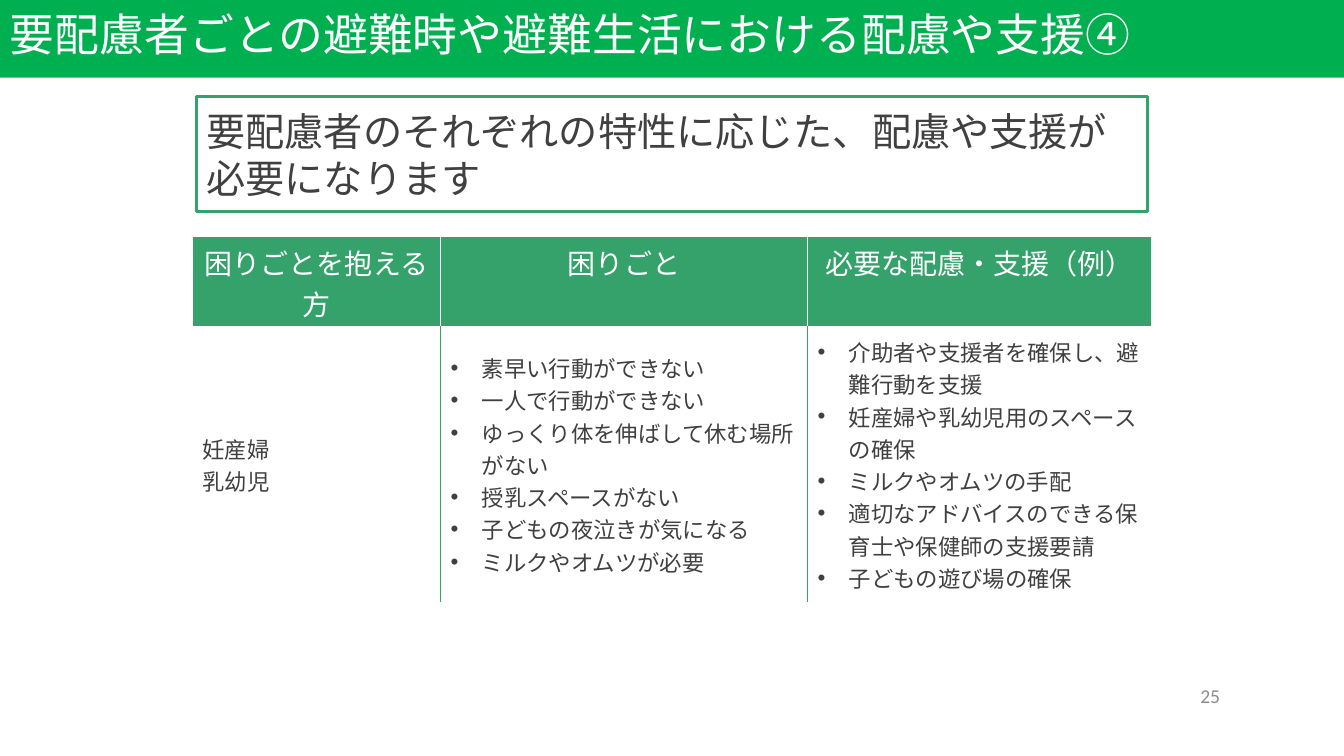
from dataclasses import dataclass

from lxml import etree
from pptx import Presentation
from pptx import util as u
from pptx.dml.color import RGBColor
from pptx.enum import shapes, text
from pptx.oxml.ns import qn


@dataclass(frozen=True)
class Theme:
    """Colours, fonts and type sizes of the slide."""
    bar: str = "00B050"
    green: str = "35A16B"
    white: str = "FFFFFF"
    ink: str = "404040"
    grey: str = "8C8C8C"
    sans: str = "Noto Sans CJK JP"
    latin: str = "Calibri"
    title: int = 32
    lead: int = 28
    head: int = 20
    body: int = 16
    page: int = 14


THEME = Theme()
LEFT, MID, RIGHT = text.PP_ALIGN.LEFT, text.PP_ALIGN.CENTER, text.PP_ALIGN.RIGHT
HEADS = ["困りごとを抱える方", "困りごと", "必要な配慮・支援（例）"]
PEOPLE = ["妊産婦", "乳幼児"]
NEEDS = [
    "素早い行動ができない",
    "一人で行動ができない",
    "ゆっくり体を伸ばして休む場所がない",
    "授乳スペースがない",
    "子どもの夜泣きが気になる",
    "ミルクやオムツが必要",
]
HELP = [
    "介助者や支援者を確保し、避難行動を支援",
    "妊産婦や乳幼児用のスペースの確保",
    "ミルクやオムツの手配",
    "適切なアドバイスのできる保育士や保健師の支援要請",
    "子どもの遊び場の確保",
]


def paint(fill, color):
    """Give a fill one solid colour."""
    fill.solid()
    fill.fore_color.rgb = RGBColor.from_string(color)


def add_bullet(para):
    """Give a paragraph a hanging round bullet."""
    props = para._p.get_or_add_pPr()
    indent = u.Inches(0.31)
    props.set("marL", str(indent))
    props.set("indent", str(-indent))
    etree.SubElement(props, qn("a:buFont"), typeface="Arial")
    etree.SubElement(props, qn("a:buChar"), char="•")


def write(frame, lines, size, color, align=LEFT, face=THEME.sans, bullet=False):
    """Fill a text frame with lines in one style."""
    frame.word_wrap = True
    for i, line in enumerate(lines):
        para = frame.paragraphs[0] if i == 0 else frame.add_paragraph()
        para.text = line
        para.alignment = align
        if bullet:
            add_bullet(para)
        font = para.font
        font.size = u.Pt(size)
        font.name = face
        font.color.rgb = RGBColor.from_string(color)
        style = para._p.pPr.find(qn("a:defRPr"))
        etree.SubElement(style, qn("a:ea"), typeface=face)


def add_box(slide, area, line, size, fill, color, edge=None):
    """Add a filled rectangle with one text line."""
    box = slide.shapes.add_shape(shapes.MSO_SHAPE.RECTANGLE, *map(u.Inches, area))
    box.shadow.inherit = False
    paint(box.fill, fill)
    if edge:
        paint(box.line.fill, edge)
        box.line.width = u.Pt(2.25)
    else:
        box.line.fill.background()
    box.text_frame.vertical_anchor = text.MSO_ANCHOR.MIDDLE
    write(box.text_frame, [line], size, color)
    return box


def add_page(slide, number):
    """Add the page number."""
    box = slide.shapes.add_textbox(*map(u.Inches, (9.95, 6.7, 2.25, 0.4)))
    box.text_frame.vertical_anchor = text.MSO_ANCHOR.MIDDLE
    write(box.text_frame, [number], THEME.page, THEME.grey, RIGHT, THEME.latin)


def set_edge(cell, side, color, width=1):
    """Draw one border of a cell."""
    props = cell._tc.get_or_add_tcPr()
    line = etree.SubElement(props, qn(f"a:ln{side}"), w=str(u.Pt(width)))
    fill = etree.SubElement(line, qn("a:solidFill"))
    etree.SubElement(fill, qn("a:srgbClr"), val=color)


def add_grid(slide):
    """Add the table of people, needs and help."""
    area = map(u.Inches, (1.91, 2.35, 9.51, 3.62))
    grid = slide.shapes.add_table(2, 3, *area).table
    for col, width in zip(grid.columns, (2.46, 3.64, 3.41)):
        col.width = u.Inches(width)
    for row, height in zip(grid.rows, (0.9, 2.72)):
        row.height = u.Inches(height)
    for i, (head, lines) in enumerate(zip(HEADS, (PEOPLE, NEEDS, HELP))):
        top, low = grid.cell(0, i), grid.cell(1, i)
        for side in "LRTB":
            set_edge(top, side, THEME.white, 3 if side == "B" else 1)
            inner = (side == "L" and i > 0) or (side == "R" and i < 2)
            set_edge(low, side, THEME.green if inner else THEME.white)
        paint(top.fill, THEME.green)
        paint(low.fill, THEME.white)
        low.vertical_anchor = text.MSO_ANCHOR.MIDDLE
        write(top.text_frame, [head], THEME.head, THEME.white, MID)
        write(low.text_frame, lines, THEME.body, THEME.ink, bullet=i > 0)


def main():
    """Build the slide and save it."""
    deck = Presentation()
    deck.slide_width, deck.slide_height = u.Inches(13.33), u.Inches(7.5)
    slide = deck.slides.add_slide(deck.slide_layouts[6])
    title = add_box(slide, (0, -0.03, 13.33, 0.8),
                    "要配慮者ごとの避難時や避難生活における配慮や支援④",
                    THEME.title, THEME.bar, THEME.white)
    title.text_frame.paragraphs[0].line_spacing = 0.9
    add_page(slide, "25")
    add_box(slide, (1.95, 0.96, 9.43, 1.14),
            "要配慮者のそれぞれの特性に応じた、配慮や支援が必要になります",
            THEME.lead, THEME.white, THEME.ink, THEME.green)
    add_grid(slide)
    deck.save("out.pptx")


if __name__ == "__main__":
    main()
